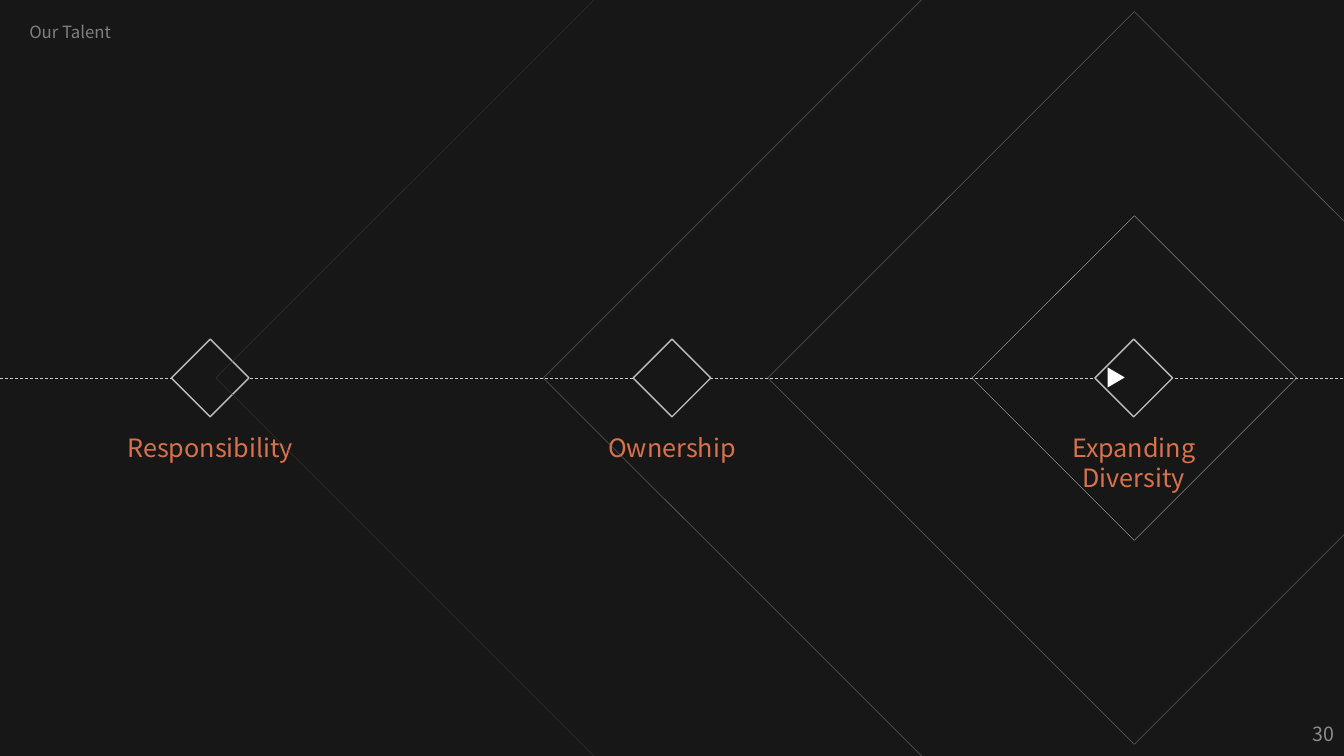
"""Build the dark talent timeline slide with three diamond milestones."""
from dataclasses import dataclass

import pptx
import pptx.dml.color
import pptx.enum.dml
import pptx.enum.shapes
import pptx.enum.text
import pptx.oxml.ns
import pptx.util
from lxml import etree

Inches = pptx.util.Inches
Pt = pptx.util.Pt
Shapes = pptx.enum.shapes.MSO_SHAPE
Align = pptx.enum.text.PP_ALIGN
Anchor = pptx.enum.text.MSO_ANCHOR

FONT = "Noto Sans CJK KR"
WIDTH, HEIGHT = 13.33, 7.5
MIDDLE = HEIGHT / 2
STEP = 4.58
NODE_SIZE = 0.77
BACKGROUND = "181717"


@dataclass(frozen=True)
class Milestone:
    lines: tuple[str, ...]
    width: float
    height: float


@dataclass(frozen=True)
class Ring:
    center: float
    size: float
    color: str


MILESTONES = [
    Milestone(("Responsibility",), 1.93, 0.4),
    Milestone(("Ownership",), 1.51, 0.4),
    Milestone(("Expanding", "Diversity"), 1.49, 0.71),
]

RINGS = [
    Ring(11.25, 3.22, "AFABAB"),
    Ring(11.25, 7.27, "767171"),
    Ring(11.42, 12.06, "767171"),
    Ring(11.42, 18.56, "3B3838"),
]


def paint(target, color: str) -> None:
    target.solid()
    target.fore_color.rgb = pptx.dml.color.RGBColor.from_string(color)


def write(box, lines: tuple[str, ...], size: float, color: str, align, anchor, wrap: bool) -> None:
    frame = box.text_frame
    frame.word_wrap = wrap
    frame.vertical_anchor = anchor
    frame.margin_left = frame.margin_right = Inches(0.1)
    frame.margin_top = frame.margin_bottom = Inches(0.05)
    frame.auto_size = pptx.enum.text.MSO_AUTO_SIZE.NONE
    frame.text = "\n".join(lines)
    for para in frame.paragraphs:
        para.alignment = align
        para.line_spacing = 1.0
        para.font.name = FONT
        para.font.size = Pt(size)
        paint(para.font.fill, color)


def add_diamond(page, center: float, size: float, color: str, weight: float, fill: str | None = None):
    diamond = page.shapes.add_shape(
        Shapes.DIAMOND, Inches(center - size / 2), Inches(MIDDLE - size / 2), Inches(size), Inches(size))
    diamond.shadow.inherit = False
    if fill:
        paint(diamond.fill, fill)
    else:
        diamond.fill.background()
    paint(diamond.line.fill, color)
    diamond.line.width = Pt(weight)
    return diamond


def add_axis(page) -> None:
    axis = page.shapes.add_connector(
        pptx.enum.shapes.MSO_CONNECTOR.STRAIGHT, 0, Inches(MIDDLE), Inches(WIDTH), Inches(MIDDLE))
    paint(axis.line.fill, "D0CECE")
    axis.line.width = Pt(0.5)
    axis.line.dash_style = pptx.enum.dml.MSO_LINE.DASH
    properties = axis.element.find(pptx.oxml.ns.qn("p:spPr"))
    etree.SubElement(properties, pptx.oxml.ns.qn("a:effectLst"))


def add_milestone(page, milestone: Milestone, center: float) -> None:
    add_diamond(page, center, NODE_SIZE, "BFBFBF", 1, BACKGROUND)
    label = page.shapes.add_textbox(
        Inches(center - milestone.width / 2), Inches(4.24), Inches(milestone.width), Inches(milestone.height))
    write(label, milestone.lines, 18, "D8724D", Align.CENTER, Anchor.TOP, False)


def add_marker(page) -> None:
    marker = page.shapes.add_shape(
        Shapes.ISOSCELES_TRIANGLE, Inches(10.97), Inches(3.66), Inches(0.2), Inches(0.17))
    marker.rotation = 90
    marker.shadow.inherit = False
    paint(marker.fill, "FFFFFF")
    marker.line.fill.background()


def main() -> None:
    deck = pptx.Presentation()
    deck.slide_width, deck.slide_height = Inches(WIDTH), Inches(HEIGHT)
    page = deck.slides.add_slide(deck.slide_layouts[5])
    paint(page.background.fill, BACKGROUND)

    title = page.shapes.title
    title.left, title.top = Inches(0.19), Inches(0.17)
    title.width, title.height = Inches(1.11), Inches(0.3)
    write(title, ("Our Talent",), 12, "808080", Align.LEFT, Anchor.TOP, False)

    add_axis(page)
    for index, milestone in enumerate(MILESTONES):
        add_milestone(page, milestone, WIDTH / 2 + (index - 1) * STEP)
    for ring in RINGS:
        add_diamond(page, ring.center, ring.size, ring.color, 0.25)
    add_marker(page)

    number = page.shapes.add_textbox(Inches(10.33), Inches(7.08), Inches(3), Inches(0.4))
    write(number, ("30",), 14, "8C8C8C", Align.RIGHT, Anchor.MIDDLE, True)
    deck.save("out.pptx")


if __name__ == "__main__":
    main()
